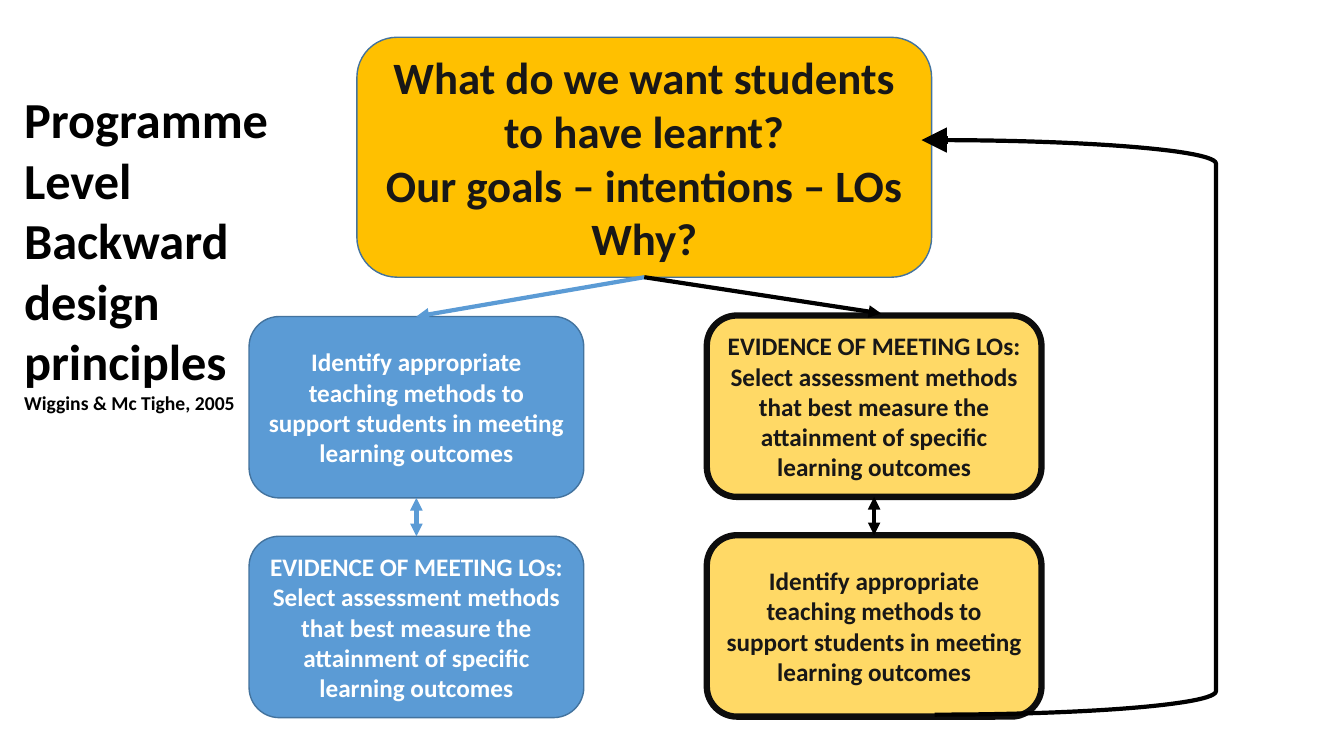
from pptx import Presentation
from pptx.dml.color import RGBColor
from pptx.enum import shapes, text
from pptx.oxml.ns import qn
from pptx.util import Inches, Pt
from lxml import etree

AMBER = RGBColor(0xFF, 0xC0, 0x00)
PALE_AMBER = RGBColor(0xFF, 0xD9, 0x66)
BLUE = RGBColor(0x5B, 0x9B, 0xD5)
DARK_BLUE = RGBColor(0x43, 0x73, 0x9E)
NEAR_BLACK = RGBColor(0x0D, 0x0D, 0x0D)
INK = RGBColor(0x18, 0x17, 0x17)
BLACK = RGBColor(0, 0, 0)
WHITE = RGBColor(0xFF, 0xFF, 0xFF)

TEACHING = ("Identify appropriate teaching methods to support students "
            "in meeting learning outcomes")
EVIDENCE = ("EVIDENCE OF MEETING LOs: Select assessment methods that best "
            "measure the attainment of specific learning outcomes")

prs = Presentation()
prs.slide_width, prs.slide_height = Inches(13.33), Inches(7.5)
slide = prs.slides.add_slide(prs.slide_layouts[6])


def add_box(left, top, width, height, fill, line, line_width, wording, size, ink):
    box = slide.shapes.add_shape(shapes.MSO_SHAPE.ROUNDED_RECTANGLE, Inches(left),
                                 Inches(top), Inches(width), Inches(height))
    box.shadow.inherit = False
    box.fill.solid()
    box.fill.fore_color.rgb = fill
    box.line.color.rgb = line
    box.line.width = Pt(line_width)
    box.text_frame.text = wording
    box.text_frame.word_wrap = True
    box.text_frame.vertical_anchor = text.MSO_ANCHOR.MIDDLE
    for paragraph in box.text_frame.paragraphs:
        paragraph.alignment = text.PP_ALIGN.CENTER
        font = paragraph.runs[0].font
        font.name, font.size, font.bold = "Calibri", Pt(size), True
        font.color.rgb = ink
    return box


def add_arrow(start, end, color, width, both_ends=False):
    arrow = slide.shapes.add_connector(shapes.MSO_CONNECTOR.STRAIGHT,
                                       *map(Inches, start + end))
    arrow.line.color.rgb = color
    arrow.line.width = Pt(width)
    line_xml = arrow.line._get_or_add_ln()
    for tag in ("a:headEnd", "a:tailEnd") if both_ends else ("a:tailEnd",):
        etree.SubElement(line_xml, qn(tag)).set("type", "triangle")
    etree.SubElement(arrow._element.spPr, qn("a:effectLst"))
    return arrow


# Goals at the top
goals = add_box(3.54, 0.37, 5.7, 2.38, AMBER, DARK_BLUE, 1,
                "What do we want students to have learnt?\n"
                "Our goals – intentions – LOs\nWhy?", 32, INK)

# Two routes below: teaching first (blue), evidence first (amber)
routes = []
for left, top, fill, line, line_width, ink, steps in (
        (2.47, 3.14, BLUE, DARK_BLUE, 1, WHITE, (TEACHING, EVIDENCE)),
        (7.01, 3.13, PALE_AMBER, NEAR_BLACK, 4.5, INK, (EVIDENCE, TEACHING))):
    routes.append([add_box(left, top + 2.18 * row, 3.32, 1.8, fill, line,
                           line_width, step, 18, ink)
                   for row, step in enumerate(steps)])

# Double arrows between the steps of each route
for (upper, lower), x, color in zip(routes, (4.13, 8.67), (BLUE, BLACK)):
    link = add_arrow((x, 4.93), (x, 5.31), color, 3, both_ends=True)
    link.begin_connect(upper, 2)
    link.end_connect(lower, 0)

# Arrows from the goals to each route
to_teaching = add_arrow((6.39, 2.75), (4.13, 3.14), BLUE, 3)
to_teaching.begin_connect(goals, 2)
to_teaching.end_connect(routes[0][0], 0)
to_evidence = add_arrow((6.39, 2.75), (8.74, 3.11), BLACK, 3)
to_evidence.begin_connect(goals, 2)

# Title and source
title = slide.shapes.add_textbox(Inches(0.14), Inches(0.83), Inches(3.08), Inches(3.37))
title.text_frame.word_wrap = True
title.text_frame.text = ("Programme Level Backward design principles\n"
                         "Wiggins & Mc Tighe, 2005")
for paragraph, size in zip(title.text_frame.paragraphs, (36, 14)):
    font = paragraph.runs[0].font
    font.name, font.size, font.bold = "Calibri", Pt(size), True
    font.color.rgb = BLACK

# Feedback loop back to the goals
loop = slide.shapes.add_shape(shapes.MSO_SHAPE.RIGHT_BRACKET, Inches(9.27),
                              Inches(1.39), Inches(2.79), Inches(5.7))
loop.shadow.inherit = False
loop.fill.background()
loop.line.color.rgb = BLACK
loop.line.width = Pt(3)
add_arrow((9.4, 1.39), (9.14, 1.39), BLACK, 6)

prs.save("out.pptx")
